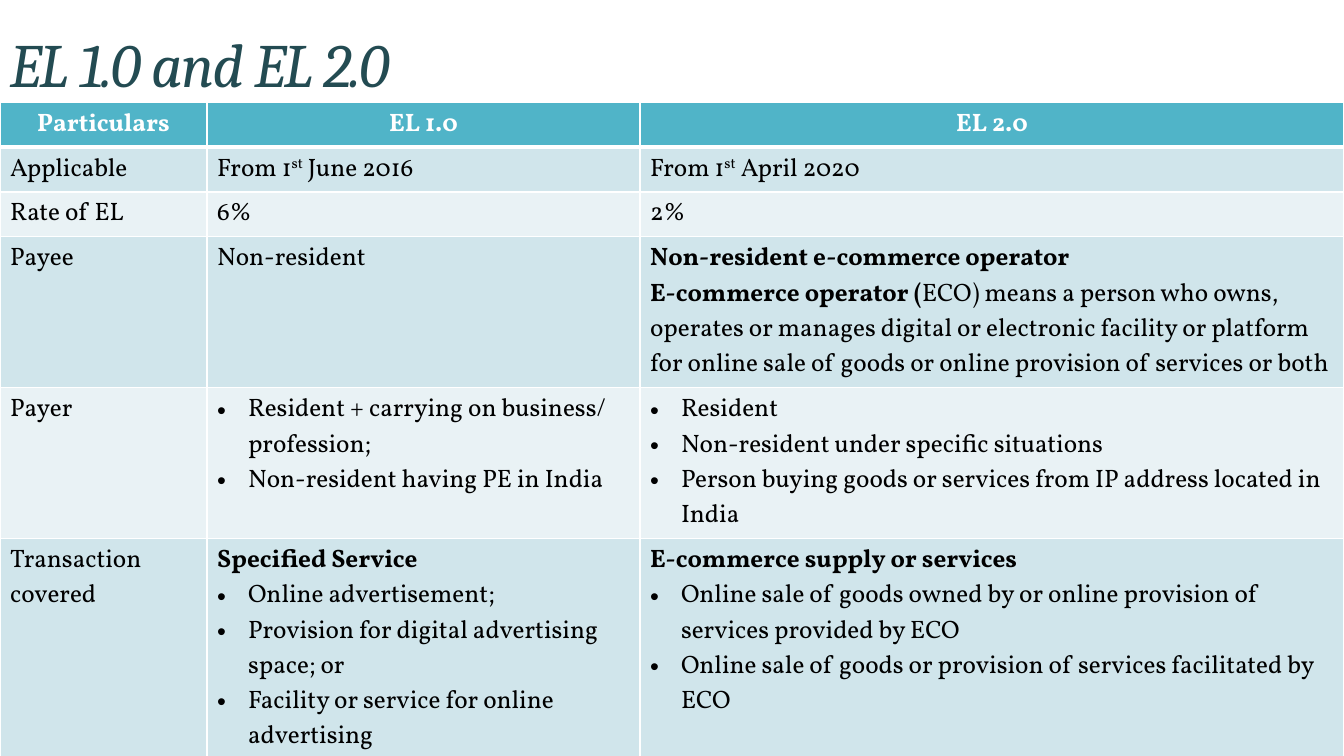
from dataclasses import dataclass
from lxml.etree import SubElement as Sub
from pptx import Presentation
from pptx.dml.color import RGBColor as RGB
from pptx.enum.text import MSO_ANCHOR as Anchor, PP_ALIGN as Align
from pptx.oxml.ns import qn
from pptx.util import Pt

SCALE = 914400 / 100.8  # EMU in one px


@dataclass(frozen=True)
class Theme:
    title: str = "234B52"
    head: str = "50B4C8"
    bands: tuple = ("D0E5EB", "E9F2F5")
    white: str = "FFFFFF"
    ink: str = "000000"
    serif: str = "Cambria"
    body: str = "Vollkorn"
    dot: str = "Arial"
    big: int = 44
    small: int = 18


THEME = Theme()
COLS = (207, 433, 704)
ROWS = (45, 45, 45, 151, 151, 221)

# Each cell is a list of paragraphs: *bold*, ^superscript^, leading • for a bullet
CELLS = [
    [["*Particulars*"], ["*EL 1.0*"], ["*EL 2.0*"]],
    [["Applicable"], ["From 1^st^ June 2016"], ["From 1^st^ April 2020"]],
    [["Rate of EL"], ["6%"], ["2%"]],
    [["Payee"], ["Non-resident"],
     ["*Non-resident e-commerce operator*",
      "*E-commerce operator (*ECO) means a person who owns, operates or manages "
      "digital or electronic facility or platform for online sale of goods or "
      "online provision of services or both"]],
    [["Payer"],
     ["•Resident + carrying on business/ profession;",
      "•Non-resident having PE in India"],
     ["•Resident",
      "•Non-resident under specific situations",
      "•Person buying goods or services from IP address located in India"]],
    [["Transaction covered"],
     ["*Specified Service*",
      "•Online advertisement;",
      "•Provision for digital advertising space; or",
      "•Facility or service for online advertising"],
     ["*E-commerce supply or services*",
      "•Online sale of goods owned by or online provision of services provided by ECO",
      "•Online sale of goods or provision of services facilitated by ECO"]],
]


def px(n):
    return round(n * SCALE)


def style(run, font, size, color):
    run.font.name = font
    run.font.size = Pt(size)
    run.font.color.rgb = RGB.from_string(color)


def add_title(slide, text):
    box = slide.shapes.add_textbox(0, 0, px(1344), px(138))
    frame = box.text_frame
    frame.word_wrap = True
    frame.vertical_anchor = Anchor.MIDDLE
    frame.text = text
    para = frame.paragraphs[0]
    para.line_spacing = 0.85
    run = para.runs[0]
    style(run, THEME.serif, THEME.big, THEME.title)
    run.font.italic = True
    run._r.get_or_add_rPr().set("spc", "-120")


def add_bullet(para):
    props = para._p.get_or_add_pPr()
    props.set("marL", str(px(31)))
    props.set("indent", str(px(-31)))
    Sub(props, qn("a:buFont"), typeface=THEME.dot)
    Sub(props, qn("a:buChar"), char="•")


def fill_para(para, text, color):
    if text.startswith("•"):
        add_bullet(para)
        text = text[1:]
    for i, part in enumerate(text.split("*")):
        for j, piece in enumerate(part.split("^")):
            if not piece:
                continue
            run = para.add_run()
            run.text = piece
            style(run, THEME.body, THEME.small, color)
            run.font.bold = i % 2 == 1
            if j % 2:
                run._r.get_or_add_rPr().set("baseline", "30000")


def add_edges(cell, top, base):
    props = cell._tc.get_or_add_tcPr()
    for side, width in zip("LRTB", (1, 1, top, base)):
        line = Sub(props, qn("a:ln" + side), w=str(Pt(width)))
        paint = Sub(line, qn("a:solidFill"))
        Sub(paint, qn("a:srgbClr"), val=THEME.white)


def fill_cell(cell, row, texts):
    head = row == 0
    add_edges(cell, 3 if row == 1 else 1, 3 if head else 1)
    cell.fill.solid()
    fill = THEME.head if head else THEME.bands[(row - 1) % 2]
    cell.fill.fore_color.rgb = RGB.from_string(fill)
    frame = cell.text_frame
    for i, text in enumerate(texts):
        para = frame.add_paragraph() if i else frame.paragraphs[0]
        if head:
            para.alignment = Align.CENTER
        fill_para(para, text, THEME.white if head else THEME.ink)


def add_grid(slide):
    frame = slide.shapes.add_table(
        len(ROWS), len(COLS), 0, px(102), px(sum(COLS)), px(sum(ROWS)))
    table = frame.table
    for col, width in zip(table.columns, COLS):
        col.width = px(width)
    for row, height in zip(table.rows, ROWS):
        row.height = px(height)
    for r, line in enumerate(CELLS):
        for c, texts in enumerate(line):
            fill_cell(table.cell(r, c), r, texts)


def main():
    deck = Presentation()
    deck.slide_width, deck.slide_height = px(1344), px(756)
    slide = deck.slides.add_slide(deck.slide_layouts[6])
    # Heading
    add_title(slide, "EL 1.0 and EL 2.0")
    # Comparison table
    add_grid(slide)
    deck.save("out.pptx")


if __name__ == "__main__":
    main()
